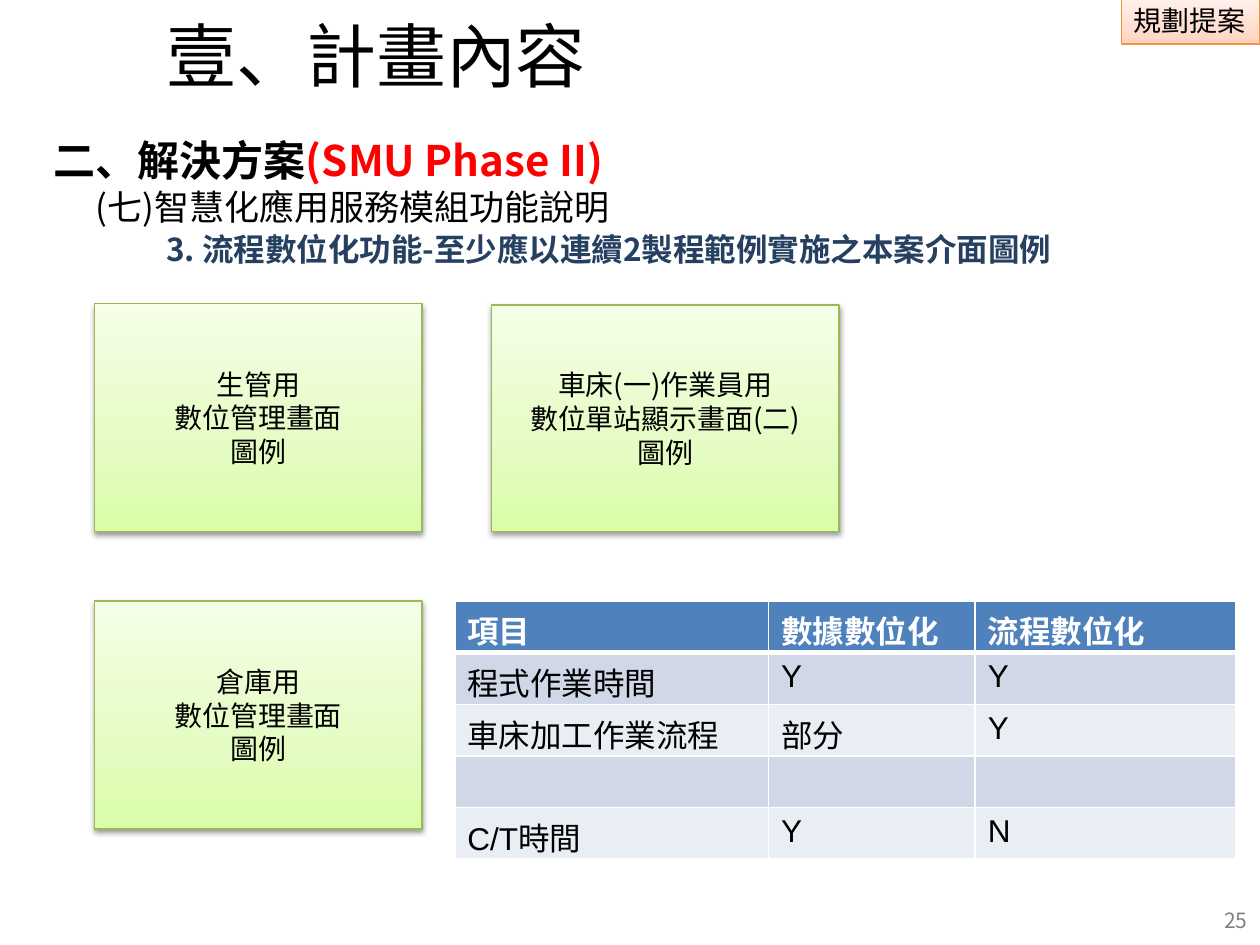
"""Build the plan-content slide with interface boxes and a digitalisation table."""
import pptx
import pptx.util
import pptx.oxml
import pptx.oxml.ns
import pptx.dml.color
import pptx.enum.shapes
import pptx.enum.text
from lxml import etree

Inches, Pt = pptx.util.Inches, pptx.util.Pt
PP_ALIGN, ANCHOR = pptx.enum.text.PP_ALIGN, pptx.enum.text.MSO_ANCHOR
NOTO = "Noto Sans CJK SC"
COLORS = {"black": "000000", "white": "FFFFFF", "red": "FF0000", "navy": "254061",
          "gray": "7F7F7F", "green": "98B955", "orange": "F69240",
          "header": "4F81BD", "odd": "D0D8E8", "even": "E9EDF4"}
GREENS = [(0, "DAFDA7"), (35, "E4FCC2"), (100, "F5FFE7")]
ORANGES = [(0, "FFD2BD"), (35, "FFDED0"), (100, "FFF2ED")]

TITLE = "壹、計畫內容"
BADGE = "規劃提案"
PAGE = "25"
SECTION = [("二、解決方案", "black"), ("(SMU Phase II)", "red")]
SUBSECTION = "(七)智慧化應用服務模組功能說明"
TOPIC = "3. 流程數位化功能-至少應以連續2製程範例實施之本案介面圖例"
SCREENS = [
    ((0.75, 2.41, 2.6, 1.81), ["生管用", "數位管理畫面", "圖例"]),
    ((3.9, 2.42, 2.76, 1.8), ["車床(一)作業員用", "數位單站顯示畫面(二)", "圖例"]),
    ((0.75, 4.77, 2.6, 1.81), ["倉庫用", "數位管理畫面", "圖例"]),
]
ROWS = [
    ("項目", "數據數位化", "流程數位化"),
    ("程式作業時間", "Y", "Y"),
    ("車床加工作業流程", "部分", "Y"),
    ("", "", ""),
    ("C/T時間", "Y", "N"),
]
COLUMN_WIDTHS = [2.49, 1.64, 2.07]
ROW_HEIGHT = 0.41


def rgb(name):
    return pptx.dml.color.RGBColor.from_string(COLORS.get(name, name))


def add_xml(parent, tag, **attributes):
    return etree.SubElement(parent, pptx.oxml.ns.qn(tag), attributes)


def style(font, size, color="black", bold=False, face=NOTO):
    font.size, font.bold, font.name = Pt(size), bold, face
    font.color.rgb = rgb(color)
    if face == NOTO:
        add_xml(font._element, "a:ea", typeface=face)


def place(shape, box):
    shape.left, shape.top, shape.width, shape.height = map(Inches, box)


def add_text(slide, box, text=""):
    frame = slide.shapes.add_textbox(*map(Inches, box)).text_frame
    frame.word_wrap = True
    frame.text = text
    return frame


def add_panel(slide, box, lines, stops, border, align, anchor):
    panel = slide.shapes.add_shape(
        pptx.enum.shapes.MSO_SHAPE.RECTANGLE, *map(Inches, box))
    panel.shadow.inherit = False
    panel.fill.gradient()
    gradient = panel._element.spPr.find(pptx.oxml.ns.qn("a:gradFill"))
    for child in list(gradient):
        gradient.remove(child)
    stop_list = add_xml(gradient, "a:gsLst")
    for position, color in stops:
        stop = add_xml(stop_list, "a:gs", pos=str(position * 1000))
        add_xml(stop, "a:srgbClr", val=color)
    add_xml(gradient, "a:lin", ang="16200000", scaled="0")
    panel.line.color.rgb = rgb(border)
    panel.line.width = Pt(0.75)
    frame = panel.text_frame
    frame.text = "\n".join(lines)
    frame.vertical_anchor = anchor
    for paragraph in frame.paragraphs:
        paragraph.alignment = align
        style(paragraph.font, 16)
    return panel


def add_shadow(panel):
    effects = panel._element.spPr.find(pptx.oxml.ns.qn("a:effectLst"))
    shadow = add_xml(effects, "a:outerShdw", blurRad="40000", dist="20000",
                     dir="5400000", rotWithShape="0")
    color = add_xml(shadow, "a:srgbClr", val=COLORS["black"])
    add_xml(color, "a:alpha", val="38000")


def add_borders(cell, bottom):
    properties = cell._tc.get_or_add_tcPr()
    for side, width in (("L", 1), ("R", 1), ("T", 1), ("B", bottom)):
        line = add_xml(properties, f"a:ln{side}", w=str(Pt(width)))
        add_xml(add_xml(line, "a:solidFill"), "a:srgbClr", val=COLORS["white"])


def add_comparison(slide):
    table = slide.shapes.add_table(
        len(ROWS), len(COLUMN_WIDTHS), Inches(3.61), Inches(4.77),
        Inches(sum(COLUMN_WIDTHS)), Inches(ROW_HEIGHT * len(ROWS))).table
    for column, width in zip(table.columns, COLUMN_WIDTHS):
        column.width = Inches(width)
    for r, values in enumerate(ROWS):
        header = r == 0
        fill = "header" if header else "odd" if r % 2 else "even"
        for c, value in enumerate(values):
            cell = table.cell(r, c)
            cell.text = value
            add_borders(cell, 3 if header else 1)
            cell.fill.solid()
            cell.fill.fore_color.rgb = rgb(fill)
            style(cell.text_frame.paragraphs[0].font, 18,
                  "white" if header else "black", header, "Arial")


def main():
    deck = pptx.Presentation()
    deck.slide_width, deck.slide_height = Inches(10), Inches(7.5)
    slide = deck.slides.add_slide(deck.slide_layouts[5])

    title = slide.shapes.title
    place(title, (1.22, 0.05, 6.69, 0.68))
    title.text_frame.text = TITLE
    title.text_frame.auto_size = pptx.enum.text.MSO_AUTO_SIZE.NONE
    title.text_frame.vertical_anchor = ANCHOR.TOP
    title.text_frame.paragraphs[0].alignment = PP_ALIGN.LEFT
    style(title.text_frame.paragraphs[0].font, 40)

    badge = add_panel(slide, (8.9, -0.02, 1.1, 0.37), [BADGE], ORANGES, "orange",
                      PP_ALIGN.LEFT, ANCHOR.TOP)
    badge.text_frame.word_wrap = False

    page = add_text(slide, (9.25, 7.16, 0.75, 0.32), PAGE)
    page.vertical_anchor = ANCHOR.MIDDLE
    page.paragraphs[0].alignment = PP_ALIGN.RIGHT
    page.paragraphs[0].line_spacing = Pt(12)
    style(page.paragraphs[0].font, 12, "gray")

    for box, lines in SCREENS:
        add_shadow(add_panel(slide, box, lines, GREENS, "green",
                             PP_ALIGN.CENTER, ANCHOR.MIDDLE))

    topic = add_text(slide, (1.22, 1.78, 7.71, 0.4), TOPIC)
    style(topic.paragraphs[0].font, 18, "navy", True)

    headings = add_text(slide, (0.26, 1.02, 6.69, 0.84))
    section = headings.paragraphs[0]
    section._p.get_or_add_pPr().set("marL", str(Inches(0.07)))
    for text, color in SECTION:
        run = section.add_run()
        run.text = text
        style(run.font, 24, color, True)
    subsection = headings.add_paragraph()
    subsection.text = SUBSECTION
    subsection._p.get_or_add_pPr().set("marL", str(Inches(0.4)))
    style(subsection.font, 20)

    add_comparison(slide)
    deck.save("out.pptx")


if __name__ == "__main__":
    main()
